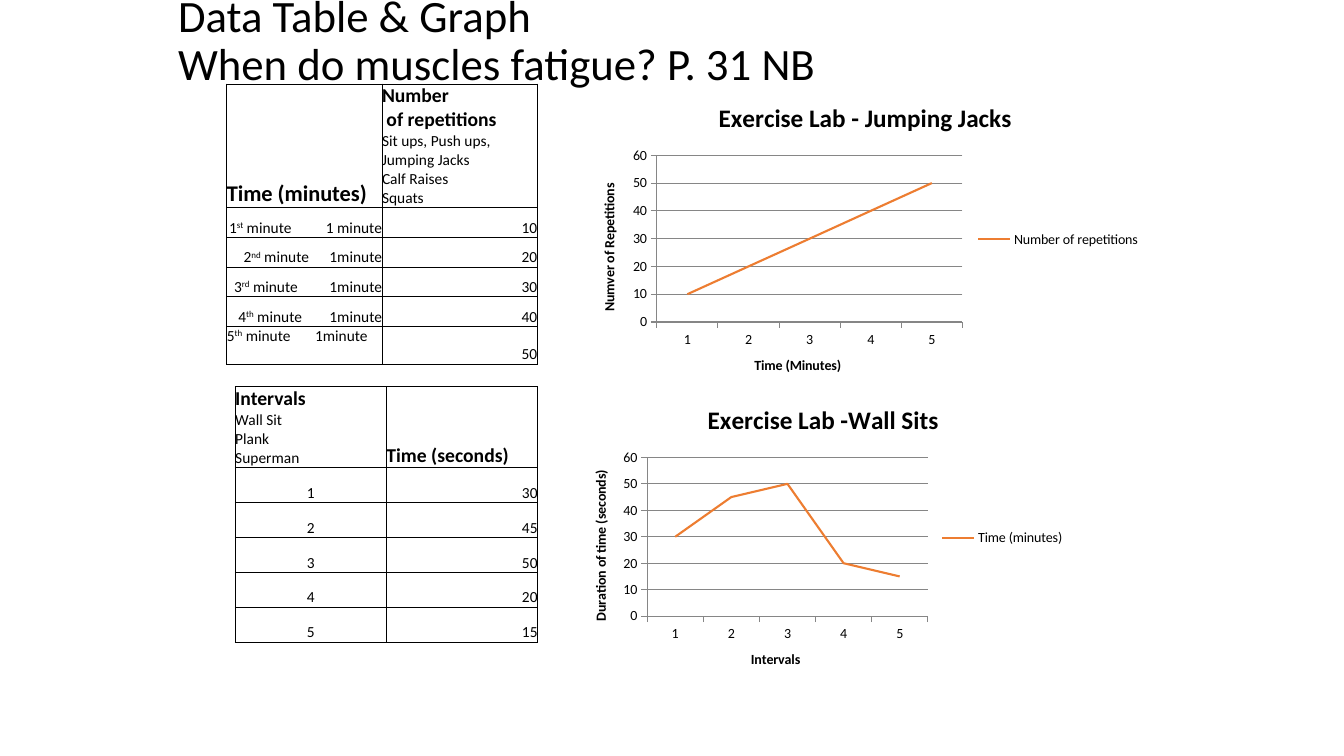
"""Build the muscle fatigue slide with its two tables and two line charts."""
import pptx
import pptx.chart.data
import pptx.dml.color
import pptx.enum.chart
import pptx.enum.text
import pptx.oxml
import pptx.oxml.ns
import pptx.util

Pt = pptx.util.Pt
ALIGN = pptx.enum.text.PP_ALIGN
ANCHOR = pptx.enum.text.MSO_ANCHOR
COLORS = {"ink": "000000", "line": "ED7D31", "grid": "868686"}
NS = pptx.oxml.ns.nsdecls("a")


def paint(name):
    return pptx.dml.color.RGBColor.from_string(COLORS[name])


def style(font, size, bold=False):
    font.name, font.size, font.bold = "Calibri", Pt(size), bold
    font.color.rgb = paint("ink")


def add_title(slide, text):
    title = slide.shapes.title
    title.left, title.top, title.width, title.height = Pt(120), Pt(0), Pt(720), Pt(60)
    frame = title.text_frame
    frame.auto_size = pptx.enum.text.MSO_AUTO_SIZE.NONE
    frame.vertical_anchor = ANCHOR.MIDDLE
    frame.text = text
    para = frame.paragraphs[0]
    para.alignment, para.line_spacing = ALIGN.LEFT, 0.9
    style(para.font, 32)


def add_grid(slide, left, top, width, heights):
    shape = slide.shapes.add_table(len(heights), 2, Pt(left), Pt(top), Pt(width), Pt(sum(heights)))
    table = shape.table
    table.horz_banding = False
    for col in table.columns:
        col.width = Pt(width / 2)
    for row, height in zip(table.rows, heights):
        row.height = Pt(height)
    for cell in table.iter_cells():
        cell.margin_left = cell.margin_right = cell.margin_top = cell.margin_bottom = 0
        cell.vertical_anchor = ANCHOR.BOTTOM
        props = cell._tc.get_or_add_tcPr()
        for side in "LRTB":
            props.append(pptx.oxml.parse_xml(
                f'<a:ln{side} {NS} w="6350"><a:solidFill><a:srgbClr val="{COLORS["ink"]}"/>'
                f'</a:solidFill></a:ln{side}>'))
        cell.fill.background()
    return table


def write(cell, lines, align=ALIGN.LEFT):
    frame = cell.text_frame
    frame.text = "\n".join(text for text, size, bold in lines)
    for para, (text, size, bold) in zip(frame.paragraphs, lines):
        para.alignment = align
        style(para.font, size, bold)


def write_time(cell, count, suffix, label, gap):
    para = cell.text_frame.paragraphs[0]
    for text in (str(count), suffix, " minute", " ", label):
        para.add_run().text = text
    para.runs[1]._r.get_or_add_rPr().set("baseline", "30000")
    para.runs[3]._r.get_or_add_rPr().set("spc", str(gap * 100))
    para.alignment = ALIGN.RIGHT
    style(para.font, 11)


def add_graph(slide, box, title, name, values, across, up):
    data = pptx.chart.data.CategoryChartData()
    data.categories = [str(n + 1) for n in range(len(values))]
    data.add_series(name, values)
    kind = pptx.enum.chart.XL_CHART_TYPE.LINE
    chart = slide.shapes.add_chart(kind, *map(Pt, box), data).chart
    style(chart.font, 10)
    chart.has_title = chart.has_legend = True
    chart.legend.position = pptx.enum.chart.XL_LEGEND_POSITION.RIGHT
    chart.legend.include_in_layout = False
    chart.plots[0].vary_by_categories = False
    heads = ((chart.chart_title, title, 18), (chart.category_axis.axis_title, across, 10),
             (chart.value_axis.axis_title, up, 10))
    for head, text, size in heads:
        head.text_frame.text = text
        style(head.text_frame.paragraphs[0].font, size, True)
    for axis in (chart.category_axis, chart.value_axis):
        axis.major_tick_mark = pptx.enum.chart.XL_TICK_MARK.OUTSIDE
        axis.format.line.color.rgb = paint("grid")
    scale = chart.value_axis
    scale.minimum_scale, scale.maximum_scale, scale.major_unit = 0, 60, 10
    scale.major_gridlines.format.line.color.rgb = paint("grid")
    series = chart.plots[0].series[0]
    series.smooth = False
    series.marker.style = pptx.enum.chart.XL_MARKER_STYLE.NONE
    series.format.line.color.rgb = paint("line")
    series.format.line.width = Pt(1.5)


def main():
    deck = pptx.Presentation()
    deck.slide_width, deck.slide_height = Pt(960), Pt(540)
    slide = deck.slides.add_slide(deck.slide_layouts[5])
    add_title(slide, "Data Table & Graph\vWhen do muscles fatigue? P. 31 NB")
    jumps, sits = (10, 20, 30, 40, 50), (30, 45, 50, 20, 15)

    table = add_grid(slide, 162, 60, 221.76, [88] + [21.2] * 4 + [27])
    write(table.cell(0, 0), [("Time (minutes)", 16, True)])
    write(table.cell(0, 1), [
        ("Number", 14, True), (" of repetitions", 14, True),
        ("Sit ups, Push ups, Jumping Jacks", 11, False),
        ("Calf Raises", 11, False), ("Squats", 11, False)])
    times = (("st", "1 minute", 22), ("nd", "1minute", 12), ("rd", "1minute", 20),
             ("th", "1minute", 17), ("th", "1minute", 15))
    for row, (time, value) in enumerate(zip(times, jumps), 1):
        write_time(table.cell(row, 0), row, *time)
        write(table.cell(row, 1), [(str(value), 11, False)], ALIGN.RIGHT)
    last = table.cell(5, 0)
    last.vertical_anchor = ANCHOR.TOP
    last.text_frame.paragraphs[0].alignment = ALIGN.LEFT

    table = add_grid(slide, 168, 276, 216, [57.6] + [25] * 5)
    write(table.cell(0, 0), [("Intervals", 14, True), ("Wall Sit", 11, False),
                             ("Plank", 11, False), ("Superman", 11, False)])
    write(table.cell(0, 1), [("Time (seconds)", 14, True)])
    for row, value in enumerate(sits, 1):
        write(table.cell(row, 0), [(str(row), 11, False)], ALIGN.CENTER)
        write(table.cell(row, 1), [(str(value), 11, False)], ALIGN.RIGHT)

    add_graph(slide, (414, 60, 408, 222), "Exercise Lab - Jumping Jacks",
              "Number of repetitions", jumps, "Time (Minutes)", "Numver of Repetitions")
    add_graph(slide, (408, 276, 360, 216), "Exercise Lab -Wall Sits",
              "Time (minutes)", sits, "Intervals", "Duration of time (seconds)")
    deck.save("out.pptx")


if __name__ == "__main__":
    main()
